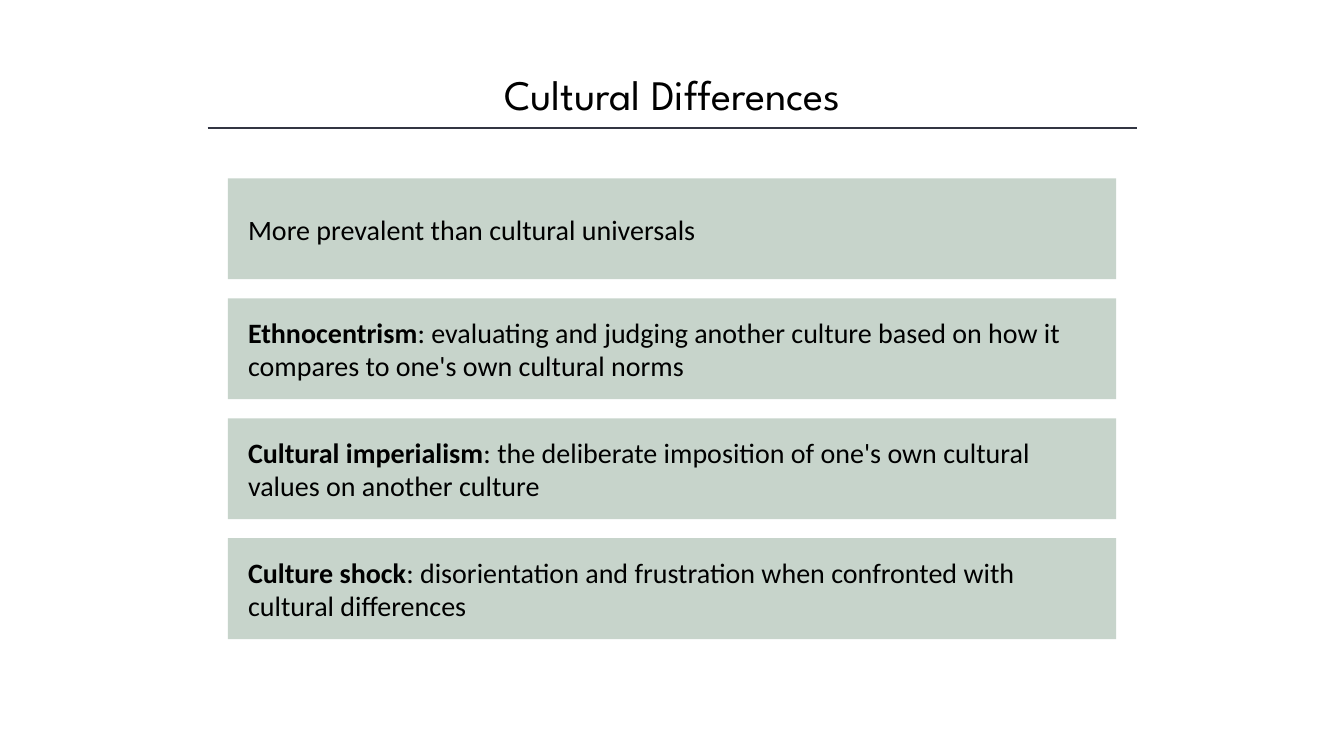
import pptx
import pptx.util
import pptx.dml.color
import pptx.enum.shapes
import pptx.enum.text
import lxml.etree

Inches = pptx.util.Inches
Pt = pptx.util.Pt
Anchor = pptx.enum.text.MSO_ANCHOR
Align = pptx.enum.text.PP_ALIGN

COLORS = {"text": "000000", "rule": "323542", "card": "C7D4CB"}

CARDS = [
    ("", "More prevalent than cultural universals"),
    ("Ethnocentrism", ": evaluating and judging another culture based on how it compares to one's own cultural norms"),
    ("Cultural imperialism", ": the deliberate imposition of one's own cultural values on another culture"),
    ("Culture shock", ": disorientation and frustration when confronted with cultural differences"),
]
TOP = 1.77
STEP = 1.19


class Deck:
    """Hold the slide and its style, and draw each kind of element."""

    def __init__(self):
        self.show = pptx.Presentation()
        self.show.slide_width = Inches(13.33)
        self.show.slide_height = Inches(7.5)
        self.slide = self.show.slides.add_slide(self.show.slide_layouts[5])

    def color(self, name):
        return pptx.dml.color.RGBColor.from_string(COLORS[name])

    def style(self, par, face, size, align):
        par.alignment = align
        par.font.name = face
        par.font.size = Pt(size)
        par.font.color.rgb = self.color("text")

    def title(self, text):
        box = self.slide.shapes.title
        box.left, box.top = Inches(1.67), Inches(0.62)
        box.width, box.height = Inches(10), Inches(0.61)
        frame = box.text_frame
        frame.text = text
        frame.vertical_anchor = Anchor.MIDDLE
        self.style(frame.paragraphs[0], "League Spartan", 30, Align.CENTER)

    def rule(self, left, right, top):
        line = self.slide.shapes.add_connector(
            pptx.enum.shapes.MSO_CONNECTOR.STRAIGHT,
            Inches(left), Inches(top), Inches(right), Inches(top))
        line.line.color.rgb = self.color("rule")
        line.line.width = Pt(1)
        props = line._element.spPr
        lxml.etree.SubElement(props, pptx.oxml.ns.qn("a:effectLst"))

    def card(self, top, term, text):
        box = self.slide.shapes.add_shape(
            pptx.enum.shapes.MSO_SHAPE.RECTANGLE,
            Inches(2.26), Inches(top), Inches(8.81), Inches(1))
        box.shadow.inherit = False
        box.fill.solid()
        box.fill.fore_color.rgb = self.color("card")
        box.line.fill.background()
        frame = box.text_frame
        frame.word_wrap = True
        frame.vertical_anchor = Anchor.MIDDLE
        frame.margin_left = Inches(0.2)
        frame.margin_right = Inches(0.27)
        par = frame.paragraphs[0]
        self.style(par, "Calibri", 20, Align.LEFT)
        if term:
            run = par.add_run()
            run.text = term
            run.font.bold = True
        par.add_run().text = text


def main():
    deck = Deck()
    deck.title("Cultural Differences")
    deck.rule(2.06, 11.28, 1.27)
    for i, (term, text) in enumerate(CARDS):
        deck.card(TOP + i * STEP, term, text)
    deck.show.save("out.pptx")


if __name__ == "__main__":
    main()
